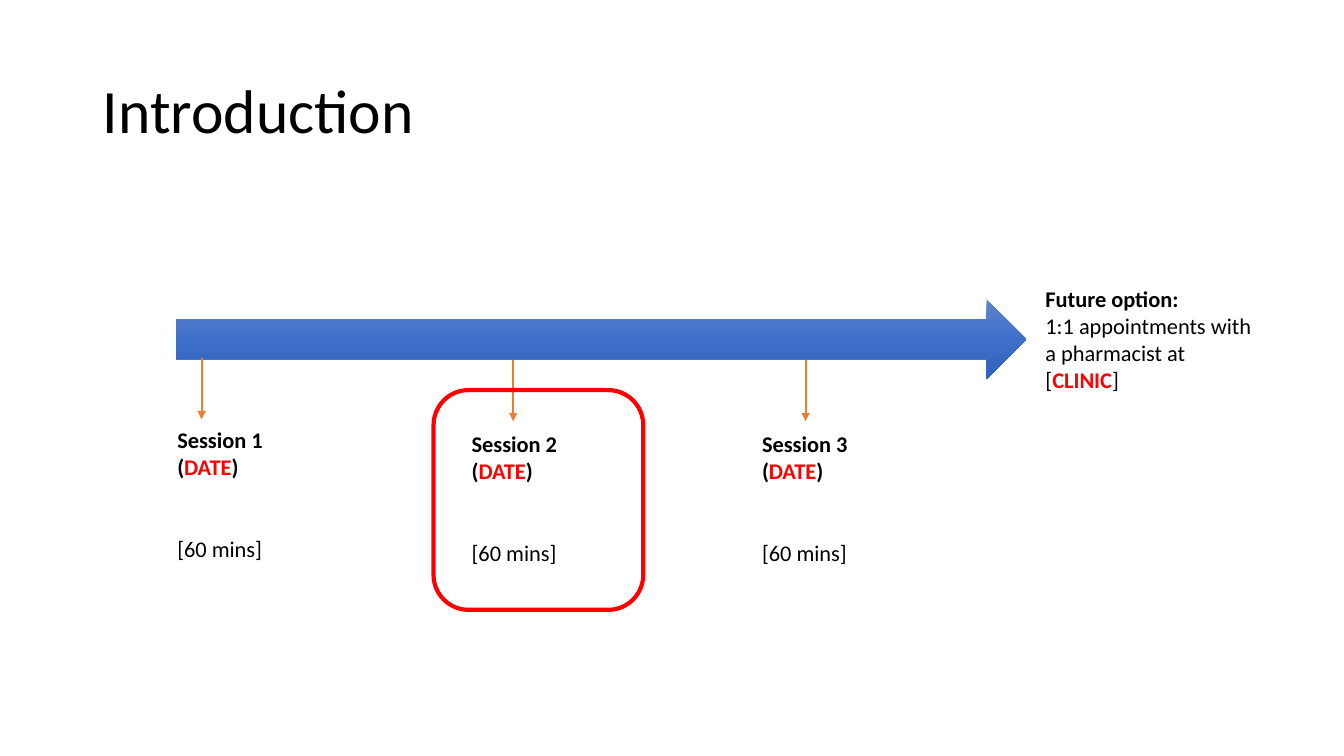
from copy import deepcopy

from lxml import etree
from pptx import Presentation
from pptx.dml.color import RGBColor
from pptx.enum.shapes import MSO_CONNECTOR, MSO_SHAPE
from pptx.enum.text import MSO_ANCHOR, MSO_AUTO_SIZE, PP_ALIGN
from pptx.oxml.ns import qn
from pptx.util import Inches, Pt

STRAIGHT = MSO_CONNECTOR.STRAIGHT
RIGHT_ARROW = MSO_SHAPE.RIGHT_ARROW
ROUNDED = MSO_SHAPE.ROUNDED_RECTANGLE
MIDDLE = MSO_ANCHOR.MIDDLE
NO_AUTOFIT = MSO_AUTO_SIZE.NONE
LEFT = PP_ALIGN.LEFT

BLACK = RGBColor(0x00, 0x00, 0x00)
RED = RGBColor(0xFF, 0x00, 0x00)
ORANGE = RGBColor(0xED, 0x7D, 0x31)
BLUES = [
    (0, RGBColor(0x61, 0x83, 0xCB)),
    (0.5, RGBColor(0x3E, 0x70, 0xCA)),
    (1, RGBColor(0x30, 0x62, 0xBB)),
]

SESSIONS = [
    ("Session 1", 2, 3.55, 1.66, 4.18, 1.68),
    ("Session 2", 5.09, 3.57, 4.58, 4.22, 1.94),
    ("Session 3", 7.99, 3.57, 7.46, 4.22, 1.7),
]
POINTER_LENGTH = 0.61
SESSION_HEIGHT = 1.45
DURATION_GAP = 39


class SlideBuilder:
    font = "Calibri"
    title_size = 44
    body_size = 16

    def __init__(self, prs):
        self.s = prs.slides.add_slide(prs.slide_layouts[5])

    def run(self, p, text, size, bold=False, color=BLACK):
        r = p.add_run()
        r.text = text
        formats = {"name": self.font, "size": Pt(size), "bold": bold}
        for name, value in formats.items():
            setattr(r.font, name, value)
        r.font.color.rgb = color

    def title(self, text, x, y, w, h):
        sp = self.s.shapes.title
        box = {"left": x, "top": y, "width": w, "height": h}
        for name, value in box.items():
            setattr(sp, name, Inches(value))
        tf = sp.text_frame
        tf.vertical_anchor = MIDDLE
        tf.auto_size = NO_AUTOFIT
        p = tf.paragraphs[0]
        p.alignment = LEFT
        p.line_spacing = 0.9
        self.run(p, text, self.title_size)

    def text(self, paragraphs, x, y, w, h):
        sp = self.s.shapes.add_textbox(Inches(x), Inches(y), Inches(w), Inches(h))
        tf = sp.text_frame
        tf.word_wrap = True
        for i, (gap, runs) in enumerate(paragraphs):
            p = tf.add_paragraph() if i else tf.paragraphs[0]
            p.space_before = Pt(gap)
            for text, bold, color in runs:
                self.run(p, text, self.body_size, bold, color)

    def shape(self, kind, x, y, w, h):
        sp = self.s.shapes.add_shape(kind, Inches(x), Inches(y), Inches(w), Inches(h))
        sp.shadow.inherit = False
        return sp

    def timeline(self, x, y, w, h):
        sp = self.shape(RIGHT_ARROW, x, y, w, h)
        sp.line.fill.background()
        sp.fill.gradient()
        sp.fill.gradient_angle = 270
        stops = sp._element.spPr.find(qn("a:gradFill")).find(qn("a:gsLst"))
        stops.insert(1, deepcopy(stops[0]))
        for stop, (position, color) in zip(sp.fill.gradient_stops, BLUES):
            stop.position = position
            stop.color.rgb = color

    def highlight(self, x, y, w, h):
        sp = self.shape(ROUNDED, x, y, w, h)
        sp.fill.background()
        sp.line.color.rgb = RED
        sp.line.width = Pt(3)

    def pointer(self, x, y, length):
        c = self.s.shapes.add_connector(
            STRAIGHT, Inches(x), Inches(y), Inches(x), Inches(y + length)
        )
        c.line.color.rgb = ORANGE
        c.line.width = Pt(1.5)
        ln = c._element.spPr.find(qn("a:ln"))
        etree.SubElement(ln, qn("a:tailEnd"), type="triangle")
        etree.SubElement(c._element.spPr, qn("a:effectLst"))


def main():
    prs = Presentation()
    prs.slide_width = Inches(13.33)
    prs.slide_height = Inches(7.5)
    slide = SlideBuilder(prs)
    slide.title("Introduction", 0.92, 0.4, 11.5, 1.45)
    slide.timeline(1.75, 2.97, 8.43, 0.79)
    for name, pointer_x, pointer_y, x, y, w in SESSIONS:
        slide.pointer(pointer_x, pointer_y, POINTER_LENGTH)
        session = [
            (0, [(name, True, BLACK)]),
            (0, [("(", True, BLACK), ("DATE", True, RED), (")", True, BLACK)]),
            (DURATION_GAP, [("[60 mins]", False, BLACK)]),
        ]
        slide.text(session, x, y, w, SESSION_HEIGHT)
    future = [
        (0, [("Future option:", True, BLACK)]),
        (0, [
            ("1:1 appointments with a pharmacist at [", False, BLACK),
            ("CLINIC", True, RED),
            ("]", False, BLACK),
        ]),
    ]
    slide.text(future, 10.27, 2.78, 2.31, 1.18)
    slide.highlight(4.3, 3.87, 2.08, 2.18)
    prs.save("out.pptx")


if __name__ == "__main__":
    main()
